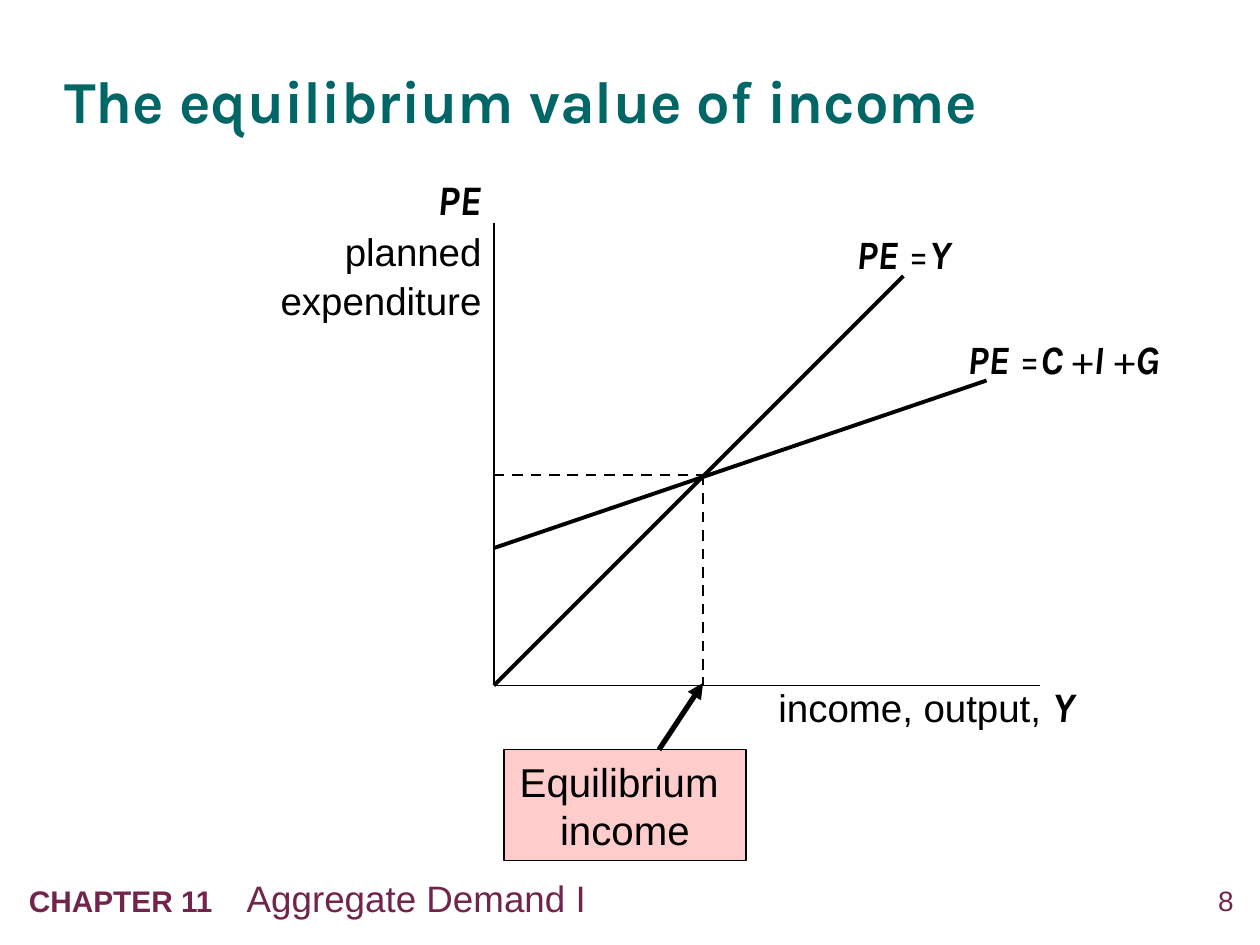
from lxml import etree
from pptx import Presentation
from pptx.dml.color import RGBColor
from pptx.enum.dml import MSO_LINE
from pptx.enum.shapes import MSO_CONNECTOR, MSO_SHAPE
from pptx.enum.text import MSO_ANCHOR, PP_ALIGN
from pptx.oxml.ns import qn
from pptx.util import Inches, Pt

BLACK = RGBColor(0x00, 0x00, 0x00)
TEAL = RGBColor(0x00, 0x66, 0x66)
PLUM = RGBColor(0x71, 0x25, 0x4B)
PINK = RGBColor(0xFF, 0xCC, 0xCC)

STRAIGHT = MSO_CONNECTOR.STRAIGHT
RECTANGLE = MSO_SHAPE.RECTANGLE
DASH = MSO_LINE.DASH
LEFT, CENTER, RIGHT = PP_ALIGN.LEFT, PP_ALIGN.CENTER, PP_ALIGN.RIGHT
TOP, MIDDLE = MSO_ANCHOR.TOP, MSO_ANCHOR.MIDDLE

PLAIN, HEADING = "Arial", "Karla"
ORIGIN = (3.92, 5.44)
EQUILIBRIUM = (5.58, 3.77)


def style_font(font, size, name=PLAIN, color=BLACK, bold=False, italic=False):
    """Set every property of a font."""
    font.size, font.name = Pt(size), name
    font.bold, font.italic = bold, italic
    font.color.rgb = color


def add_box(page, left, top, width, height, inset=True, anchor=TOP):
    """Add an empty wrapping text box and return its text frame."""
    box = page.shapes.add_textbox(
        Inches(left), Inches(top), Inches(width), Inches(height))
    frame = box.text_frame
    frame.word_wrap = True
    frame.vertical_anchor = anchor
    if not inset:
        frame.margin_left = frame.margin_right = 0
        frame.margin_top = frame.margin_bottom = 0
    return frame


def write_line(para, text, size, align=LEFT, **look):
    """Fill a paragraph with text in a single style."""
    para.text = text
    para.alignment = align
    style_font(para.font, size, **look)


def write_span(para, text, size, **look):
    """Append a styled run to a paragraph."""
    span = para.add_run()
    span.text = text
    style_font(span.font, size, **look)


def add_equation(page, left, top, width, height, parts):
    """Add a curve label whose variables are bold italic and operators upright."""
    para = add_box(page, left, top, width, height).paragraphs[0]
    for text in parts:
        variable = text.strip().isalpha()
        write_span(para, text, 23, name=HEADING, bold=variable, italic=variable)


def add_line(page, start, end, width, dashed=False, arrow=False):
    """Draw a straight black line between two points."""
    line = page.shapes.add_connector(
        STRAIGHT, *(Inches(value) for value in (*start, *end)))
    line.line.color.rgb = BLACK
    line.line.width = Pt(width)
    if dashed:
        line.line.dash_style = DASH
    if arrow:
        etree.SubElement(line.line._get_or_add_ln(), qn("a:tailEnd"), type="triangle")
    etree.SubElement(line._element.spPr, qn("a:effectLst"))


def add_callout(page, left, top, width, height, text):
    """Add a pink outlined box with centred text."""
    box = page.shapes.add_shape(
        RECTANGLE, Inches(left), Inches(top), Inches(width), Inches(height))
    box.shadow.inherit = False
    box.fill.solid()
    box.fill.fore_color.rgb = PINK
    box.line.color.rgb = BLACK
    box.line.width = Pt(0.75)
    box.text_frame.word_wrap = True
    box.text_frame.vertical_anchor = MIDDLE
    write_line(box.text_frame.paragraphs[0], text, 23, CENTER)


def add_footer(page):
    """Add the page number and the chapter line."""
    number = add_box(page, 9.24, 7.01, 0.55, 0.32, inset=False)
    write_line(number.paragraphs[0], "8", 16, RIGHT, color=PLUM)
    para = add_box(page, 0.13, 6.9, 8.18, 0.45).paragraphs[0]
    write_span(para, "CHAPTER 11\t", 17, color=PLUM, bold=True)
    write_span(para, "Aggregate Demand I", 21, color=PLUM)
    tabs = etree.SubElement(para._p.get_or_add_pPr(), qn("a:tabLst"))
    etree.SubElement(tabs, qn("a:tab"), pos=str(Inches(1.73)), algn="l")


def add_title(page):
    """Add the slide heading."""
    para = add_box(page, 0.51, 0.26, 9.02, 1.03, False, MIDDLE).paragraphs[0]
    write_line(para, "The equilibrium value of income", 34,
               name=HEADING, color=TEAL, bold=True)
    para.line_spacing = 1.05


def add_axes(page):
    """Draw both axes with their labels."""
    add_line(page, (ORIGIN[0], 1.77), ORIGIN, 1)
    add_line(page, ORIGIN, (8.25, ORIGIN[1]), 1)

    income = add_box(page, 6.08, 5.35, 2.83, 0.5).paragraphs[0]
    write_span(income, "income, output,", 22)
    write_span(income, " ", 24)
    write_span(income, "Y", 24, name=HEADING, bold=True, italic=True)

    spending = add_box(page, 1.92, 1.33, 2, 1.27)
    write_line(spending.paragraphs[0], "PE", 24, RIGHT,
               name=HEADING, bold=True, italic=True)
    for text in ("planned", "expenditure"):
        para = spending.add_paragraph()
        write_line(para, text, 22, RIGHT)
        para.space_before = Pt(2)


def add_curves(page):
    """Draw the two curves, their labels and the equilibrium guides."""
    add_line(page, ORIGIN, (7.17, 2.19), 2.25)
    add_equation(page, 6.7, 1.77, 1.21, 0.49, ("PE", " =", "Y"))
    add_equation(page, 7.58, 2.6, 2.25, 0.48,
                 ("PE", " =", "C ", "+", "I ", "+", "G"))
    add_line(page, (ORIGIN[0], 4.35), (7.83, 3.02), 2.25)
    add_line(page, EQUILIBRIUM, (EQUILIBRIUM[0], ORIGIN[1]), 1.5, dashed=True)
    add_line(page, (ORIGIN[0], EQUILIBRIUM[1]), EQUILIBRIUM, 1.5, dashed=True)


def main():
    """Build the slide and save the deck."""
    deck = Presentation()
    deck.slide_width, deck.slide_height = Inches(10), Inches(7.5)
    page = deck.slides.add_slide(deck.slide_layouts[6])
    add_footer(page)
    add_title(page)
    add_axes(page)
    add_curves(page)
    add_callout(page, 4, 5.95, 1.92, 0.88, "Equilibrium \vincome")
    add_line(page, (5.23, 5.95), (EQUILIBRIUM[0], 5.42), 3, arrow=True)
    deck.save("out.pptx")


if __name__ == "__main__":
    main()
